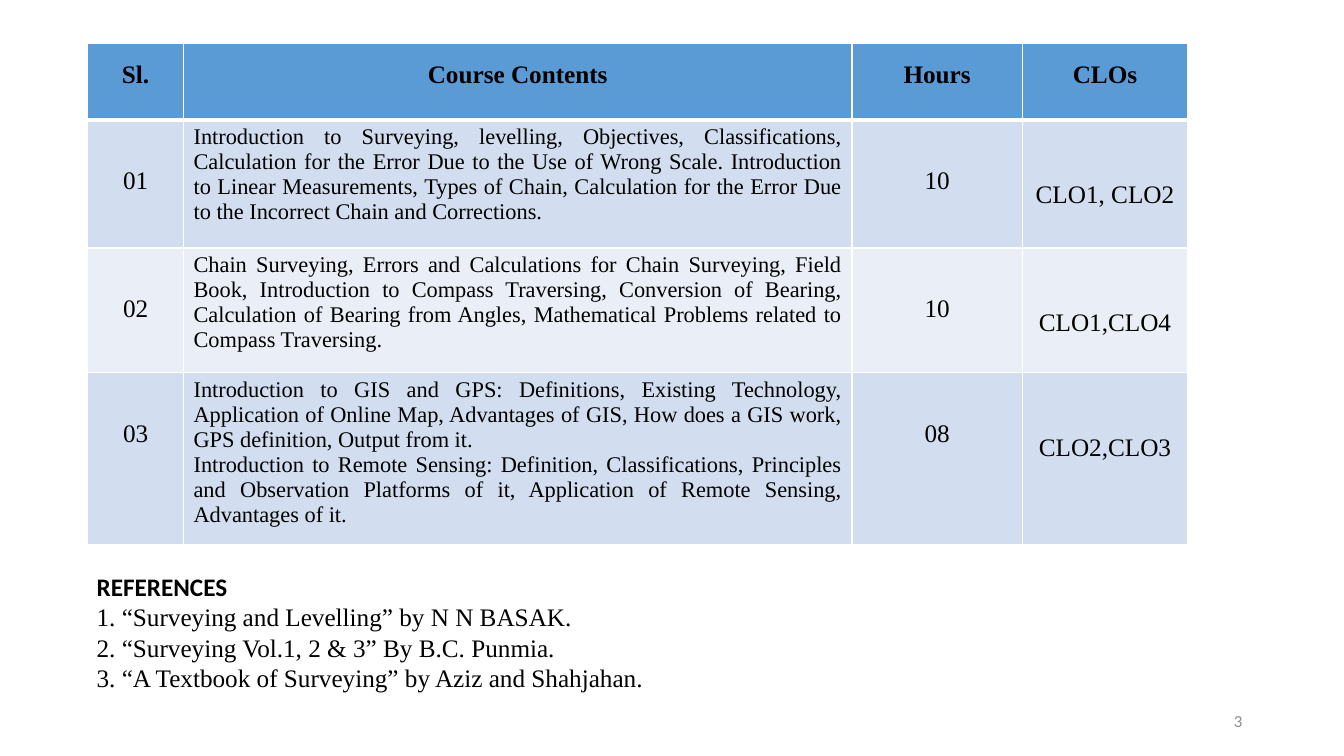
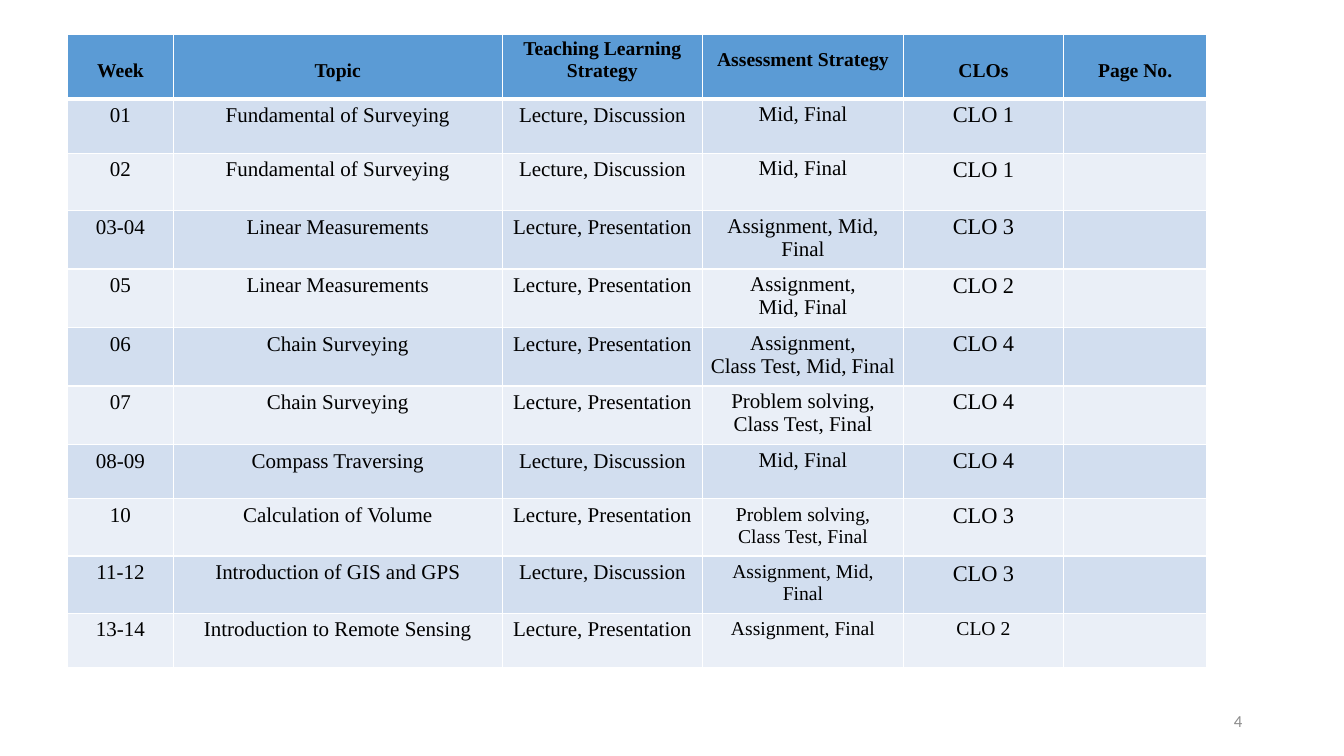
from dataclasses import dataclass, replace

from lxml.etree import SubElement
from pptx import Presentation
from pptx.dml.color import RGBColor
from pptx.enum.text import MSO_ANCHOR, PP_ALIGN
from pptx.oxml.ns import qn
from pptx.util import Inches, Pt

SLIDE_WIDTH, SLIDE_HEIGHT = 13.33, 7.5
BLACK, WHITE, GREY = "000000", "FFFFFF", "8C8C8C"
HEADER_FILL = "5B9BD5"
BAND_FILLS = ("D2DEEF", "EAEFF7")
SERIF, SANS = "Times New Roman", "Calibri"


@dataclass(frozen=True)
class TextStyle:
    size: int
    align: PP_ALIGN = PP_ALIGN.CENTER
    spacing: float = 1.0
    bold: bool = False
    font: str = SERIF
    color: str = BLACK
    tight: bool = False


CONTENT_HEADER = TextStyle(18, spacing=1.5, bold=True, tight=True)
CONTENT_NUMBER = TextStyle(18, spacing=2.5)
CONTENT_COLUMNS = [
    CONTENT_NUMBER,
    TextStyle(16, PP_ALIGN.JUSTIFY),
    CONTENT_NUMBER,
    TextStyle(18, spacing=3.0),
]
CONTENTS = [
    ("Sl.", "Course Contents", "Hours", "CLOs"),
    ("01", "Introduction to Surveying, levelling, Objectives, Classifications, "
     "Calculation for the Error Due to the Use of Wrong Scale. Introduction to "
     "Linear Measurements, Types of Chain, Calculation for the Error Due to the "
     "Incorrect Chain and Corrections.", "10", "CLO1, CLO2"),
    ("02", "Chain Surveying, Errors and Calculations for Chain Surveying, Field "
     "Book, Introduction to Compass Traversing, Conversion of Bearing, "
     "Calculation of Bearing from Angles, Mathematical Problems related to "
     "Compass Traversing.", "10", "CLO1,CLO4"),
    ("03", "Introduction to GIS and GPS: Definitions, Existing Technology, "
     "Application of Online Map, Advantages of GIS, How does a GIS work, GPS "
     "definition, Output from it.\n"
     "Introduction to Remote Sensing: Definition, Classifications, Principles "
     "and Observation Platforms of it, Application of Remote Sensing, "
     "Advantages of it.", "08", "CLO2,CLO3"),
]
REFERENCES = [
    "1. “Surveying and Levelling” by N N BASAK.",
    "2. “Surveying Vol.1, 2 & 3” By B.C. Punmia.",
    "3. “A Textbook of Surveying” by Aziz and Shahjahan.",
]

PLAN_TEXT = TextStyle(15)
PLAN_HEADER_SPACING = (2.0, 2.0, 1.0, 1.5, 2.0, 2.0)
TALK, SHOW = "Lecture, Discussion", "Lecture, Presentation"
PLAN = [
    ("Week", "Topic", "Teaching Learning\nStrategy", "Assessment Strategy",
     "CLOs", "Page No."),
    ("01", "Fundamental of Surveying", TALK, "Mid, Final", "CLO 1", ""),
    ("02", "Fundamental of Surveying", TALK, "Mid, Final", "CLO 1", ""),
    ("03-04", "Linear Measurements", SHOW, "Assignment, Mid, Final", "CLO 3", ""),
    ("05", "Linear Measurements", SHOW, "Assignment,\nMid, Final", "CLO 2", ""),
    ("06", "Chain Surveying", SHOW, "Assignment,\nClass Test, Mid, Final", "CLO 4", ""),
    ("07", "Chain Surveying", SHOW, "Problem solving,\nClass Test, Final", "CLO 4", ""),
    ("08-09", "Compass Traversing", TALK, "Mid, Final", "CLO 4", ""),
    ("10", "Calculation of Volume", SHOW, "Problem solving,\nClass Test, Final", "CLO 3", ""),
    ("11-12", "Introduction of GIS and GPS", TALK, "Assignment, Mid, Final", "CLO 3", ""),
    ("13-14", "Introduction to Remote Sensing", SHOW, "Assignment, Final", "CLO 2", ""),
]


def rgb(color):
    return RGBColor.from_string(color)


def write_paragraph(para, text, style):
    para.text = text
    para.alignment = style.align
    para.line_spacing = style.spacing
    font = para.font
    font.name, font.size, font.bold = style.font, Pt(style.size), style.bold
    font.color.rgb = rgb(style.color)


def write_lines(frame, styled_lines):
    """Fill a text frame with one paragraph for each (text, style) pair."""
    for index, (text, style) in enumerate(styled_lines):
        para = frame.add_paragraph() if index else frame.paragraphs[0]
        write_paragraph(para, text, style)


def add_text(page, left, top, width, height, styled_lines, anchor=MSO_ANCHOR.TOP):
    box = page.shapes.add_textbox(
        Inches(left), Inches(top), Inches(width), Inches(height))
    frame = box.text_frame
    frame.word_wrap = True
    frame.vertical_anchor = anchor
    write_lines(frame, styled_lines)


def add_page_number(page, number):
    style = TextStyle(12, PP_ALIGN.RIGHT, font=SANS, color=GREY)
    add_text(page, 9.42, 6.95, 3, 0.4, [(str(number), style)], MSO_ANCHOR.MIDDLE)


def set_borders(cell, top, bottom):
    """Draw white cell borders; top and bottom are widths in points."""
    properties = cell._tc.get_or_add_tcPr()
    for side, width in (("L", 1), ("R", 1), ("T", top), ("B", bottom)):
        line = SubElement(properties, qn(f"a:ln{side}"), w=str(Pt(width)))
        fill = SubElement(line, qn("a:solidFill"))
        SubElement(fill, qn("a:srgbClr"), val=WHITE)


def format_cell(cell, text, style, row):
    set_borders(cell, top=3 if row == 1 else 1, bottom=3 if row == 0 else 1)
    cell.fill.solid()
    cell.fill.fore_color.rgb = rgb(BAND_FILLS[(row - 1) % 2] if row else HEADER_FILL)
    if style.tight:
        cell.margin_left = cell.margin_right = Inches(0.07)
        cell.margin_top = cell.margin_bottom = Inches(0.04)
    write_lines(cell.text_frame, [(line, style) for line in text.split("\n")])


def add_banded_table(page, left, top, widths, heights, rows, style_of):
    """Add a table whose cell styles come from style_of(row, column)."""
    table = page.shapes.add_table(
        len(rows), len(widths), Inches(left), Inches(top),
        Inches(sum(widths)), Inches(sum(heights))).table
    table.first_row = table.horz_banding = False
    for column, width in zip(table.columns, widths):
        column.width = Inches(width)
    for table_row, height in zip(table.rows, heights):
        table_row.height = Inches(height)
    for row, texts in enumerate(rows):
        for column, text in enumerate(texts):
            format_cell(table.cell(row, column), text, style_of(row, column), row)


def content_style(row, column):
    return CONTENT_COLUMNS[column] if row else CONTENT_HEADER


def plan_style(row, column):
    if row == 0:
        return TextStyle(14, spacing=PLAN_HEADER_SPACING[column], bold=True, tight=True)
    if column < 3:
        return PLAN_TEXT
    last_weeks = row >= 8
    if column == 3:
        size = 14 if last_weeks else 15
    else:
        size = 14 if row == len(PLAN) - 1 else 16
    return replace(PLAN_TEXT, size=size, tight=not last_weeks)


def build_contents(page):
    add_page_number(page, 3)
    add_banded_table(page, 0.87, 0.43, (0.95, 6.63, 1.69, 1.64),
                     (0.76, 1.27, 1.24, 1.69), CONTENTS, content_style)
    item = TextStyle(18, PP_ALIGN.LEFT)
    heading = replace(item, bold=True, font=SANS)
    add_text(page, 0.86, 5.62, 7.55, 1.4,
             [("REFERENCES", heading)] + [(line, item) for line in REFERENCES])


def build_plan(page):
    heights = [0.64, 0.54, 0.57] + [0.54] * (len(PLAN) - 3)
    add_banded_table(page, 0.67, 0.34, (1.05, 3.26, 1.99, 1.99, 1.59, 1.42),
                     heights, PLAN, plan_style)
    add_page_number(page, 4)


def main():
    deck = Presentation()
    deck.slide_width, deck.slide_height = Inches(SLIDE_WIDTH), Inches(SLIDE_HEIGHT)
    blank_layout = deck.slide_layouts[6]
    for build in (build_contents, build_plan):
        build(deck.slides.add_slide(blank_layout))
    deck.save("out.pptx")


if __name__ == "__main__":
    main()
